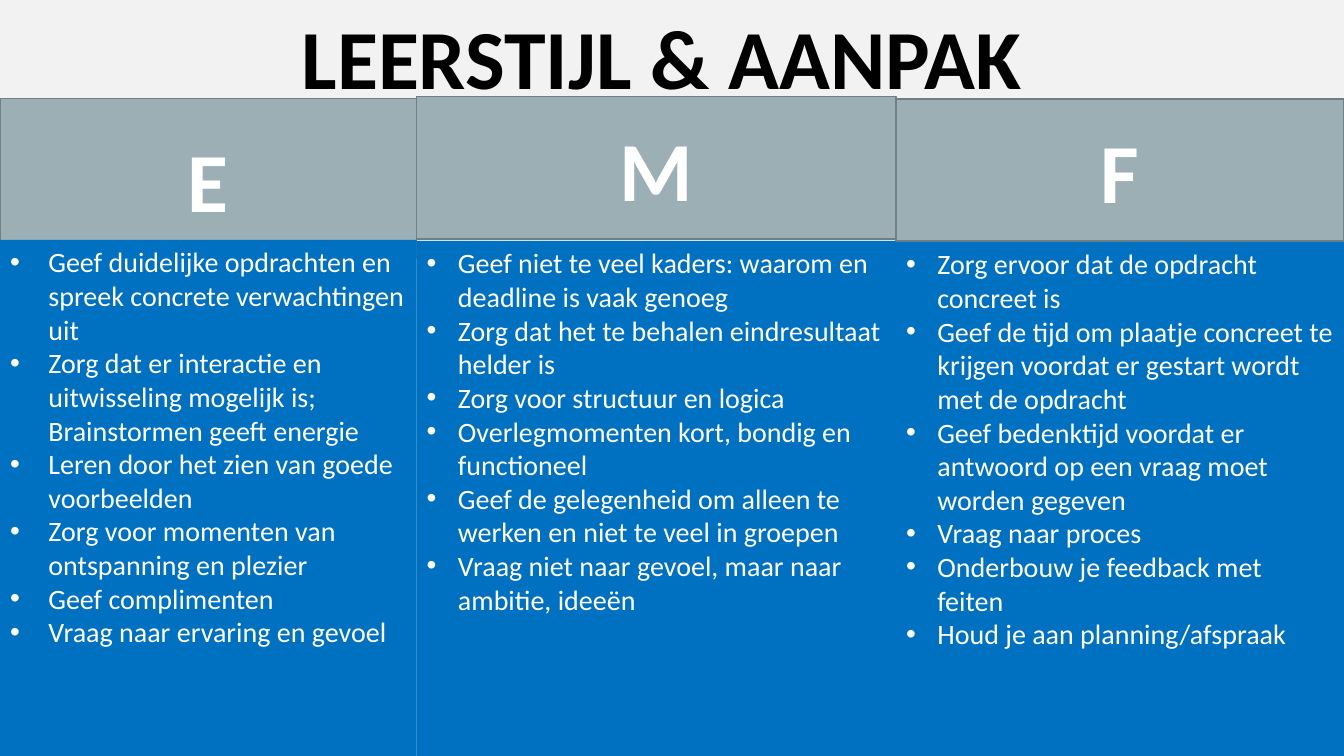
from dataclasses import dataclass

from lxml.etree import SubElement as Sub
from pptx import Presentation
from pptx.dml.color import RGBColor as Rgb
from pptx.enum.shapes import MSO_SHAPE as Form
from pptx.enum.text import MSO_ANCHOR as Anchor, MSO_AUTO_SIZE as Auto, PP_ALIGN as Align
from pptx.oxml.ns import qn
from pptx.util import Inches, Pt

WIDE, HIGH = Inches(13.333), Inches(7.5)
WHITE, BLACK, PALE = "FFFFFF", "000000", "F2F2F2"
GREY, EDGE, BLUE = "9BAFB5", "717F84", "0070C0"


# Box sides are percentages of the slide's width and height
@dataclass
class Box:
    left: float
    top: float
    width: float
    height: float


@dataclass
class Style:
    letter: str
    left: float
    right: float
    head_top: float
    head_high: float
    list_top: float
    list_high: float
    indent: float
    tips: list[str]


STYLES = [
    Style("E", 0, 31, 13.07, 21.07, 31.73, 94.27, 0.38, [
        "Geef duidelijke opdrachten en spreek concrete verwachtingen uit",
        "Zorg dat er interactie en uitwisseling mogelijk is; Brainstormen geeft energie",
        "Leren door het zien van goede voorbeelden",
        "Zorg voor momenten van ontspanning en plezier",
        "Geef complimenten",
        "Vraag naar ervaring en gevoel",
    ]),
    Style("M", 31, 66.67, 12.8, 18.8, 31.87, 114.93, 0.31, [
        "Geef niet te veel kaders: waarom en deadline is vaak genoeg",
        "Zorg dat het te behalen eindresultaat helder is",
        "Zorg voor structuur en logica",
        "Overlegmomenten kort, bondig en functioneel",
        "Geef de gelegenheid om alleen te werken en niet te veel in groepen",
        "Vraag niet naar gevoel, maar naar ambitie, ideeën",
    ]),
    Style("F", 66.67, 100, 13.07, 18.8, 32, 91.6, 0.31, [
        "Zorg ervoor dat de opdracht concreet is",
        "Geef de tijd om plaatje concreet te krijgen voordat er gestart wordt met de opdracht",
        "Geef bedenktijd voordat er antwoord op een vraag moet worden gegeven",
        "Vraag naar proces",
        "Onderbouw je feedback met feiten",
        "Houd je aan planning/afspraak",
    ]),
]


def paint(fill, color: str) -> None:
    fill.solid()
    fill.fore_color.rgb = Rgb.from_string(color)


def place(shape, box: Box) -> None:
    shape.left, shape.width = (int(WIDE * part / 100) for part in (box.left, box.width))
    shape.top, shape.height = (int(HIGH * part / 100) for part in (box.top, box.height))


def frame(shape, anchor: Anchor):
    text = shape.text_frame
    text.word_wrap, text.auto_size = True, Auto.NONE
    text.vertical_anchor = anchor
    text.margin_left = text.margin_right = Inches(0.1)
    text.margin_top = text.margin_bottom = Inches(0.05)
    return text


def write(par, words: str, size: int, color: str, bold: bool, align: Align) -> None:
    par.alignment = align
    par.line_spacing, par.space_before, par.space_after = 1.0, Pt(0), Pt(0)
    run = par.add_run()
    run.text = words
    run.font.name, run.font.size, run.font.bold = "Calibri", Pt(size), bold
    paint(run.font.fill, color)


def bullet(par, indent: float) -> None:
    props = par._p.get_or_add_pPr()
    props.set("marL", str(Inches(indent)))
    props.set("indent", str(-Inches(indent)))
    Sub(Sub(props, qn("a:buClr")), qn("a:srgbClr"), val=WHITE)
    Sub(props, qn("a:buFont"), typeface="Arial")
    Sub(props, qn("a:buChar"), char="•")


def draw_head(slide, style: Style) -> None:
    head = slide.shapes.add_shape(Form.RECTANGLE, 0, 0, 0, 0)
    place(head, Box(style.left, style.head_top, style.right - style.left, style.head_high))
    head.shadow.inherit = False
    paint(head.fill, GREY)
    paint(head.line.fill, EDGE)
    head.line.width = Pt(1)
    write(frame(head, Anchor.MIDDLE).paragraphs[0], style.letter, 60, WHITE, True, Align.CENTER)


def draw_list(slide, body, style: Style) -> None:
    place(body, Box(style.left, style.list_top, style.right - style.left, style.list_high))
    paint(body.fill, BLUE)
    text = frame(body, Anchor.TOP)
    for spot, tip in enumerate(style.tips):
        par = text.add_paragraph() if spot else text.paragraphs[0]
        write(par, tip, 20, WHITE, False, Align.LEFT)
        bullet(par, style.indent)
    # Lists lie in front of the headers
    slide.shapes._spTree.append(body._element)


def main() -> None:
    deck = Presentation()
    deck.slide_width, deck.slide_height = WIDE, HIGH
    slide = deck.slides.add_slide(deck.slide_layouts.get_by_name("Comparison"))
    paint(slide.background.fill, PALE)

    # Title
    title, *bodies = slide.placeholders
    place(title, Box(3.3, 0, 91.88, 14.8))
    write(frame(title, Anchor.TOP).paragraphs[0], "LEERSTIJL & AANPAK", 60, BLACK, True, Align.CENTER)

    # One column per learning style
    for style, body in zip(STYLES, bodies):
        draw_head(slide, style)
        draw_list(slide, body, style)

    # The layout's spare placeholder
    spare = bodies[-1]._element
    spare.getparent().remove(spare)
    deck.save("out.pptx")


if __name__ == "__main__":
    main()
